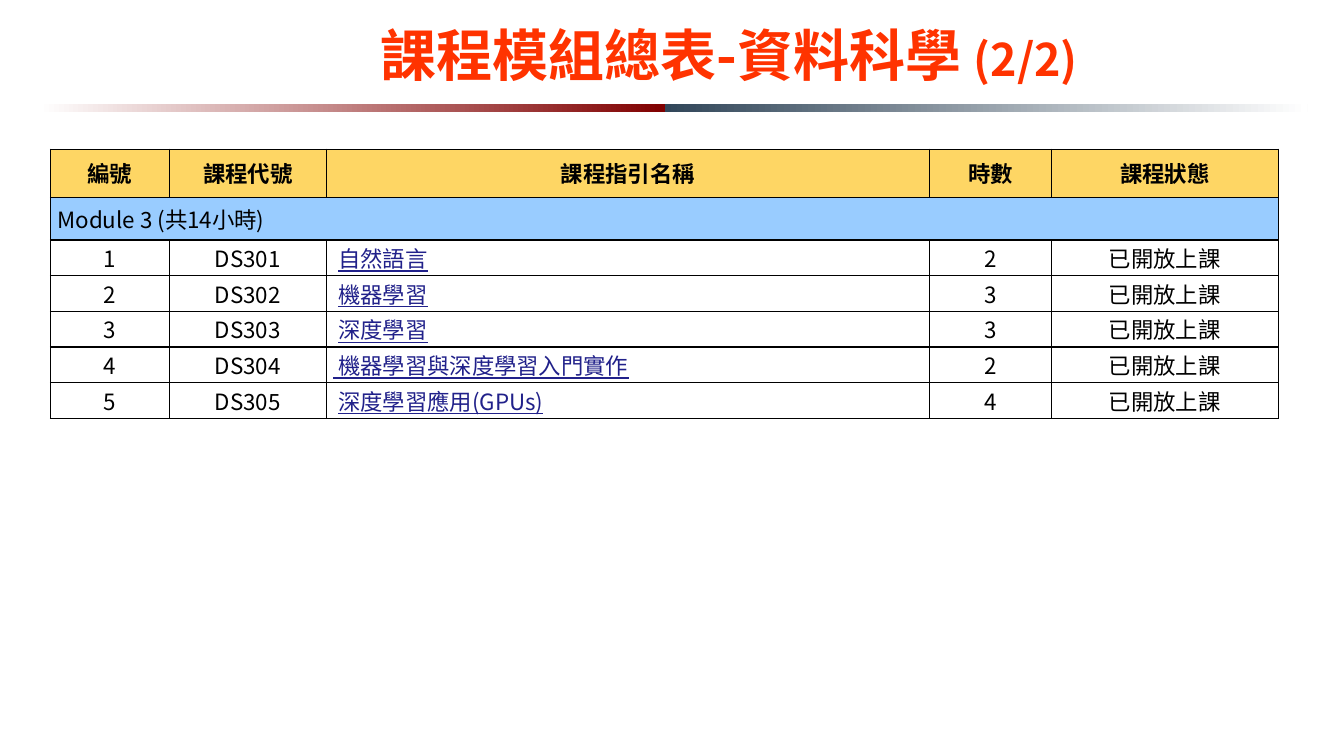
from lxml import etree
from pptx import Presentation
from pptx.dml.color import RGBColor
from pptx.enum.shapes import MSO_SHAPE
from pptx.enum.text import MSO_ANCHOR, PP_ALIGN
from pptx.oxml.ns import qn
from pptx.util import Pt

RECTANGLE = MSO_SHAPE.RECTANGLE
MIDDLE = MSO_ANCHOR.MIDDLE
LEFT, CENTER = PP_ALIGN.LEFT, PP_ALIGN.CENTER

FONT = "Noto Sans CJK TC"
BLACK, LINK = "000000", "21218A"
HEADER_FILL, MODULE_FILL = "FED664", "99CCFF"
HEADERS = ["編號", "課程代號", "課程指引名稱", "時數", "課程狀態"]
MODULE = "Module 3 (共14小時)"
COURSES = [
    ("自然語言", 2),
    ("機器學習", 3),
    ("深度學習", 3),
    (" 機器學習與深度學習入門實作", 2),
    ("深度學習應用(GPUs)", 4),
]
COLUMN_WIDTHS = [85, 112, 431, 87, 162]
ROW_HEIGHTS = [34.5, 30.5] + [25.5] * len(COURSES)
NAME_COLUMN = 2


def color(hex_string):
    return RGBColor.from_string(hex_string)


def style_run(run, size, hex_color, bold=False, latin=FONT):
    """Format a run, with the same East Asian font throughout."""
    run.font.size = Pt(size)
    run.font.bold = bold
    run.font.color.rgb = color(hex_color)
    run.font.name = latin
    latin_element = run.font._element.find(qn("a:latin"))
    east_asian = etree.Element(qn("a:ea"), typeface=FONT)
    latin_element.addnext(east_asian)


presentation = Presentation()
presentation.slide_width = Pt(960)
presentation.slide_height = Pt(540)
slide = presentation.slides.add_slide(presentation.slide_layouts[6])

# Two-part gradient rule under the title
for left, width, start, end in [
    (28, 447, "FFFFFF", "800000"),
    (475, 459, "314659", "FFFFFF"),
]:
    bar = slide.shapes.add_shape(RECTANGLE, Pt(left), Pt(74.5), Pt(width), Pt(5.8))
    bar.shadow.inherit = False
    bar.line.fill.background()
    bar.fill.gradient()
    bar.fill.gradient_angle = 0
    for stop, hex_color in zip(bar.fill.gradient_stops, (start, end)):
        stop.color.rgb = color(hex_color)

# Title
title = slide.shapes.add_textbox(Pt(108), Pt(6), Pt(826), Pt(65.5))
title.text_frame.word_wrap = True
title.text_frame.vertical_anchor = MIDDLE
paragraph = title.text_frame.paragraphs[0]
paragraph.alignment = CENTER
for text, size in [("課程模組總表-資料科學 ", 40), ("(2/2)", 32)]:
    run = paragraph.add_run()
    run.text = text
    style_run(run, size, "FF3300", bold=True)

# Course table
rows = [HEADERS, [MODULE] + [""] * (len(HEADERS) - 1)]
for number, (name, hours) in enumerate(COURSES, start=1):
    rows.append([str(number), f"DS30{number}", name, str(hours), "已開放上課"])

table = slide.shapes.add_table(
    len(rows), len(HEADERS), Pt(36), Pt(106.5),
    Pt(sum(COLUMN_WIDTHS)), Pt(sum(ROW_HEIGHTS)),
).table
table.first_row = False
table.horz_banding = False
for column, width in zip(table.columns, COLUMN_WIDTHS):
    column.width = Pt(width)
for row, height in zip(table.rows, ROW_HEIGHTS):
    row.height = Pt(height)
table.cell(1, 0).merge(table.cell(1, len(HEADERS) - 1))

for row_index, texts in enumerate(rows):
    for column_index, text in enumerate(texts):
        cell = table.cell(row_index, column_index)
        is_link = row_index > 1 and column_index == NAME_COLUMN
        is_indented = is_link and not text.startswith(" ")
        cell.vertical_anchor = MIDDLE
        cell.margin_left = Pt(8.6 if is_indented else 5)
        cell.margin_right = Pt(5)
        cell.margin_top = cell.margin_bottom = 0

        # Borders come before the fill in the cell properties
        properties = cell._tc.get_or_add_tcPr()
        for side in ("lnL", "lnR", "lnT", "lnB"):
            border = etree.SubElement(properties, qn(f"a:{side}"), w=str(Pt(1)))
            border_fill = etree.SubElement(border, qn("a:solidFill"))
            etree.SubElement(border_fill, qn("a:srgbClr"), val=BLACK)
        if row_index < 2:
            cell.fill.solid()
            cell.fill.fore_color.rgb = color((HEADER_FILL, MODULE_FILL)[row_index])
        else:
            cell.fill.background()

        if not text:
            continue
        cell.text_frame.text = text
        paragraph = cell.text_frame.paragraphs[0]
        paragraph.alignment = LEFT if is_link or row_index == 1 else CENTER
        run = paragraph.runs[0]
        latin = "Arial" if text.startswith(" ") else FONT
        style_run(run, 16, LINK if is_link else BLACK, row_index == 0, latin)
        if is_link:
            run.font.underline = True

presentation.save("out.pptx")
